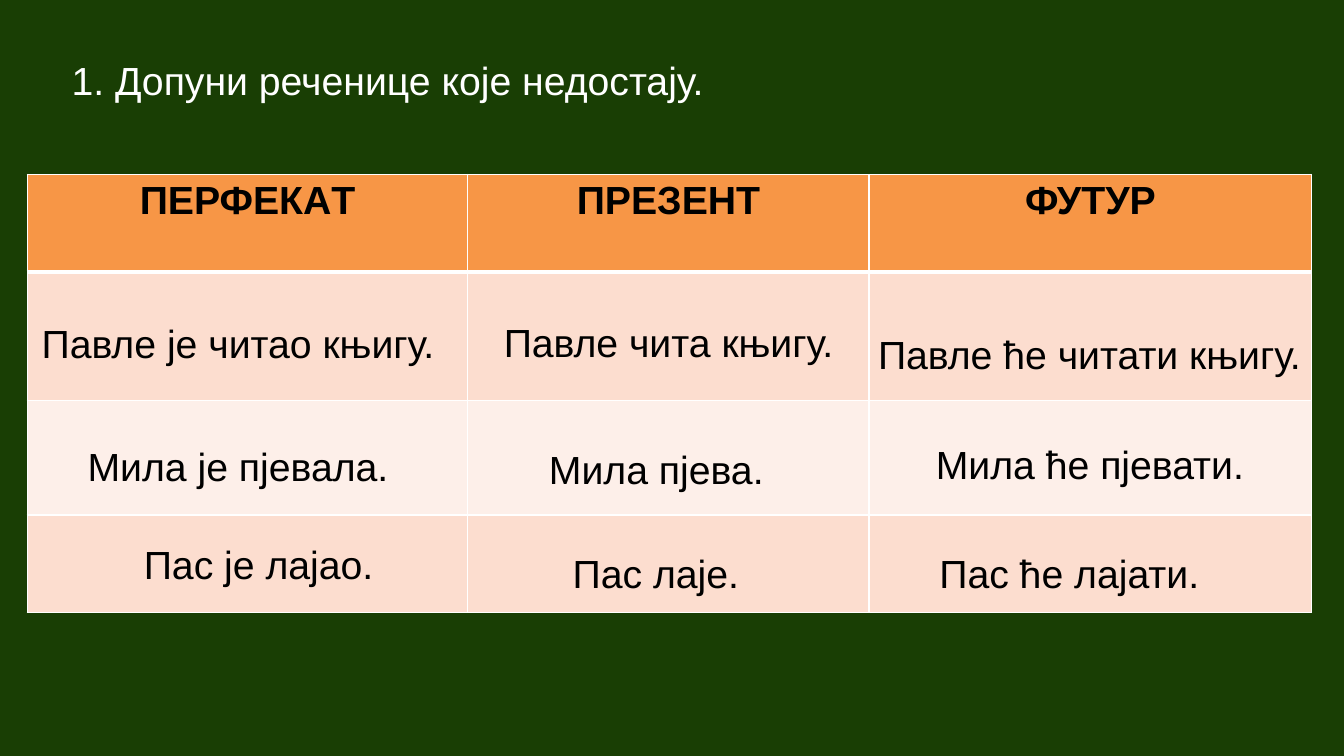
import pptx
import pptx.dml.color
import pptx.enum.text
import pptx.oxml
import pptx.oxml.ns
import pptx.util
from pptx.util import Inches

ALIGN = pptx.enum.text.PP_ALIGN
HEADINGS = ["ПЕРФЕКAТ", "ПРЕЗЕНТ", "ФУТУР"]
COLUMN_WIDTHS = [4.37, 3.98, 4.39]
ROW_HEIGHTS = [0.97, 1.27, 1.14, 0.97]
ROW_FILLS = ["F79646", "FCDDCF", "FDEFE9", "FCDDCF"]
ANSWERS = [
    ("Павле је читао књигу.", 0.29, 3.12, 4.14),
    ("Павле ће читати књигу.", 8.58, 3.23, 4.45),
    ("Мила је пјевала.", 0.75, 4.34, 3.22),
    ("Мила пјева.", 5.33, 4.37, 2.36),
    ("Мила ће пјевати.", 9.16, 4.32, 3.3),
    ("Пас је лајао.", 1.31, 5.31, 2.51),
    ("Пас лаје.", 5.57, 5.4, 1.87),
    ("Пас ће лајати.", 9.2, 5.4, 2.81),
]


def rgb(color):
    return pptx.dml.color.RGBColor.from_string(color)


def write(tf, text, color="000000", bold=False, align=ALIGN.CENTER):
    tf.text = text
    p = tf.paragraphs[0]
    p.alignment = align
    font = p.runs[0].font
    font.name = "Arial"
    font.size = pptx.util.Pt(28)
    font.bold = bold
    font.color.rgb = rgb(color)


def add_border(cell, side, points):
    cell._tc.get_or_add_tcPr().append(pptx.oxml.parse_xml(
        f'<a:ln{side} {pptx.oxml.ns.nsdecls("a")} w="{pptx.util.Pt(points)}">'
        '<a:solidFill><a:srgbClr val="FFFFFF"/></a:solidFill>'
        f'</a:ln{side}>'))


def add_title(s, text):
    title = s.shapes.title
    title.left, title.top = Inches(0.61), Inches(0.51)
    title.width, title.height = Inches(12.06), Inches(1.04)
    tf = title.text_frame
    write(tf, text, "FFFFFF", align=ALIGN.LEFT)
    tf.word_wrap = True
    tf.auto_size = pptx.enum.text.MSO_AUTO_SIZE.NONE
    tf.vertical_anchor = pptx.enum.text.MSO_ANCHOR.TOP


def add_tense_table(s):
    table = s.shapes.add_table(
        len(ROW_HEIGHTS), len(COLUMN_WIDTHS), Inches(0.27), Inches(1.73),
        Inches(sum(COLUMN_WIDTHS)), Inches(sum(ROW_HEIGHTS))).table
    for column, width in zip(table.columns, COLUMN_WIDTHS):
        column.width = Inches(width)
    for i, (row, height) in enumerate(zip(table.rows, ROW_HEIGHTS)):
        row.height = Inches(height)
        for cell in row.cells:
            for side in "LRTB":
                under_heading = (i, side) in ((0, "B"), (1, "T"))
                add_border(cell, side, 3 if under_heading else 1)
            cell.fill.solid()
            cell.fill.fore_color.rgb = rgb(ROW_FILLS[i])
    for cell, heading in zip(table.rows[0].cells, HEADINGS):
        write(cell.text_frame, heading, bold=True)
    example = table.cell(1, 1)
    example.margin_top = Inches(0.5)
    write(example.text_frame, "Павле чита књигу.")


def add_answer(s, text, left, top, width):
    box = s.shapes.add_textbox(Inches(left), Inches(top), Inches(width), Inches(0.57))
    tf = box.text_frame
    tf.word_wrap = False
    tf.auto_size = pptx.enum.text.MSO_AUTO_SIZE.SHAPE_TO_FIT_TEXT
    write(tf, text)


def main():
    prs = pptx.Presentation()
    prs.slide_width, prs.slide_height = Inches(13.33), Inches(7.5)
    s = prs.slides.add_slide(prs.slide_layouts[5])
    s.background.fill.solid()
    s.background.fill.fore_color.rgb = rgb("193E04")
    add_title(s, "1. Допуни реченице које недостају.")
    add_tense_table(s)
    for answer in ANSWERS:
        add_answer(s, *answer)
    prs.save("out.pptx")


if __name__ == "__main__":
    main()
